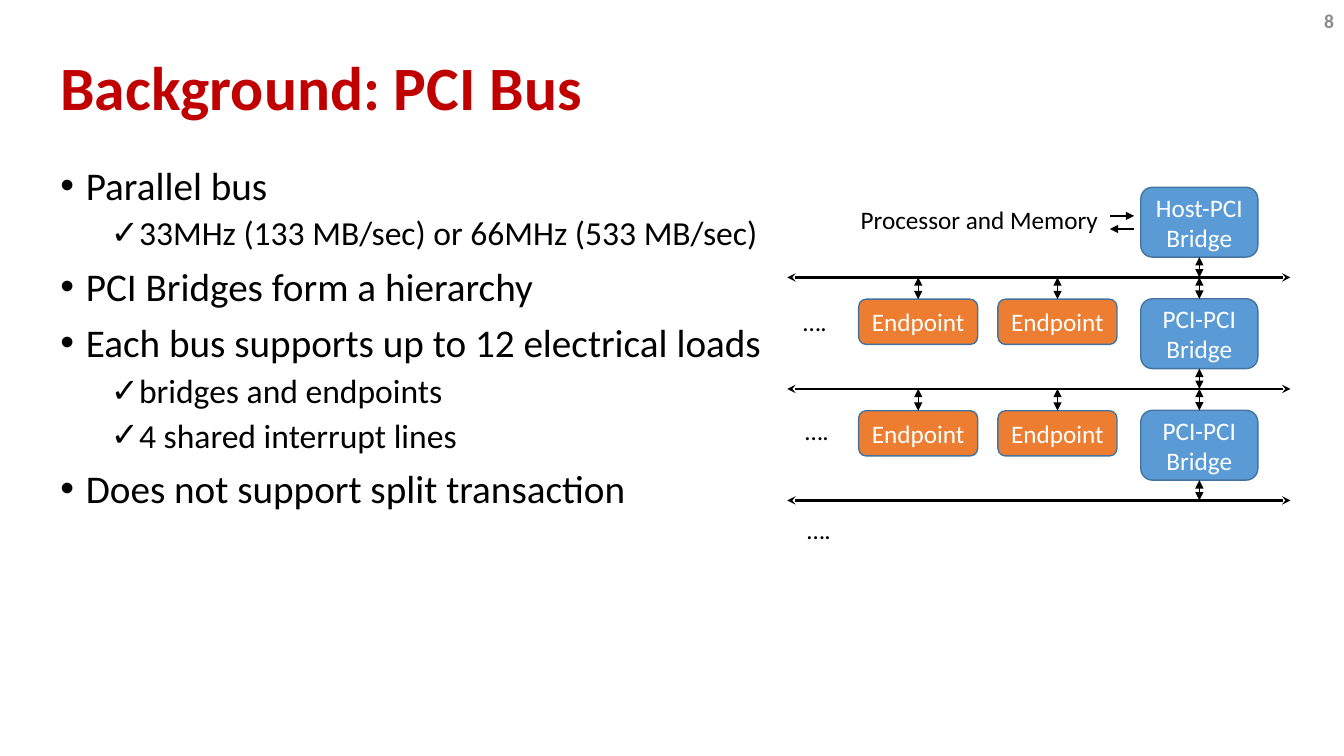
from lxml.etree import SubElement
from pptx import Presentation
from pptx.dml.color import RGBColor
from pptx.enum.shapes import MSO_CONNECTOR, MSO_SHAPE
from pptx.enum.text import MSO_ANCHOR, MSO_AUTO_SIZE, PP_ALIGN
from pptx.oxml.ns import qn
from pptx.util import Cm, Pt

BLACK, WHITE, RED, GREY = "000000", "FFFFFF", "C00000", "8C8C8C"
BLUE, ORANGE, OUTLINE = "5B9BD5", "ED7D31", "43739E"

LEVEL_PITCH = 2.81
BUS_TOP, BUS_LEFT, BUS_RIGHT = 6.99, 19.84, 32.52
BRIDGE_TOP, BRIDGE_LEFT, BRIDGE_WIDTH, BRIDGE_HEIGHT = 4.72, 28.75, 2.95, 1.76
ENDPOINT_TOP, ENDPOINT_WIDTH, ENDPOINT_HEIGHT = 7.54, 3, 1.14
ENDPOINT_LEFTS = (21.64, 25.15)
BRIDGES = ("Host-PCI\nBridge", "PCI-PCI\nBridge", "PCI-PCI\nBridge")
ELLIPSIS_PLACES = ((19.99, 7.6), (20.04, 10.34), (20.09, 12.83))

# Size, space before, left margin (cm) and bullet for each list level
LIST_LEVELS = ((28, 10, 0.64, "•"), (24, 6, 1.91, "✓"))
BULLETS = (
    (0, "Parallel bus"),
    (1, "33MHz (133 MB/sec) or 66MHz (533 MB/sec)"),
    (0, "PCI Bridges form a hierarchy"),
    (0, "Each bus supports up to 12 electrical loads"),
    (1, "bridges and endpoints"),
    (1, "4 shared interrupt lines"),
    (0, "Does not support split transaction"),
)


def colour(value):
    return RGBColor.from_string(value)


def set_format(target, values):
    for key, value in values.items():
        setattr(target, key, value)


def format_font(paragraph, size, hex_colour, bold=False):
    set_format(paragraph.font, {"name": "Calibri", "size": Pt(size), "bold": bold})
    paragraph.font.color.rgb = colour(hex_colour)


def place(shape, left, top, width, height):
    set_format(shape, {"left": Cm(left), "top": Cm(top),
                       "width": Cm(width), "height": Cm(height)})


def fill_title(title):
    place(title, 1.27, 1.02, 31.75, 2.54)
    title.text_frame.text = "Background: PCI Bus"
    set_format(title.text_frame, {"auto_size": MSO_AUTO_SIZE.NONE,
                                  "vertical_anchor": MSO_ANCHOR.MIDDLE})
    heading = title.text_frame.paragraphs[0]
    set_format(heading, {"alignment": PP_ALIGN.LEFT, "line_spacing": 0.9})
    format_font(heading, 44, RED, bold=True)


def fill_list(body):
    place(body, 1.27, 4.06, 20.55, 13.97)
    body.text_frame.text = "\n".join(text for _, text in BULLETS)
    set_format(body.text_frame, {"auto_size": MSO_AUTO_SIZE.NONE,
                                 "vertical_anchor": MSO_ANCHOR.TOP})
    for item, (level, _) in zip(body.text_frame.paragraphs, BULLETS):
        size, space, margin, bullet = LIST_LEVELS[level]
        set_format(item, {"level": level, "line_spacing": 0.9,
                          "space_before": Pt(space), "space_after": Pt(0)})
        format_font(item, size, BLACK)
        properties = item._p.get_or_add_pPr()
        properties.set("marL", str(Cm(margin)))
        properties.set("indent", str(Cm(-0.64)))
        SubElement(properties, qn("a:buFont")).set("typeface", "Arial")
        SubElement(properties, qn("a:buChar")).set("char", bullet)


def add_label(slide, text, left, top, width, size=18, hex_colour=BLACK, bold=False,
              wrap=True, align=PP_ALIGN.LEFT, anchor=MSO_ANCHOR.TOP):
    label = slide.shapes.add_textbox(Cm(left), Cm(top), Cm(width), Cm(1.02))
    set_format(label.text_frame, {"text": text, "word_wrap": wrap,
                                  "vertical_anchor": anchor})
    line = label.text_frame.paragraphs[0]
    line.alignment = align
    format_font(line, size, hex_colour, bold)


def add_node(slide, text, left, top, width, height, fill):
    node = slide.shapes.add_shape(MSO_SHAPE.ROUNDED_RECTANGLE,
                                  Cm(left), Cm(top), Cm(width), Cm(height))
    node.shadow.inherit = False
    node.fill.solid()
    node.fill.fore_color.rgb = colour(fill)
    node.line.color.rgb = colour(OUTLINE)
    node.line.width = Pt(1)
    set_format(node.text_frame, {"text": text, "word_wrap": True,
                                 "vertical_anchor": MSO_ANCHOR.MIDDLE})
    for line in node.text_frame.paragraphs:
        line.alignment = PP_ALIGN.CENTER
        format_font(line, 18, WHITE)
    return node


def add_arrow(slide, start, end, width=1, head="triangle", tail="triangle"):
    """Draw a line with an arrowhead at its start (head) and its end (tail)."""
    arrow = slide.shapes.add_connector(MSO_CONNECTOR.STRAIGHT,
                                       *(Cm(value) for value in start + end))
    arrow.line.color.rgb = colour(BLACK)
    arrow.line.width = Pt(width)
    outline = arrow.line._get_or_add_ln()
    for tag, kind in (("a:headEnd", head), ("a:tailEnd", tail)):
        SubElement(outline, qn(tag)).set("type", kind)
    SubElement(arrow._element.spPr, qn("a:effectLst"))
    return arrow


def link_to_bus(slide, node, site, node_y, bus_y):
    """Join the top (0) or bottom (2) of a node to a bus."""
    centre = (node.left + node.width // 2) / Cm(1)
    link = add_arrow(slide, (centre, node_y), (centre, bus_y))
    link.begin_connect(node, site)


def add_bus_level(slide, level, bridge_name):
    """Draw a bridge, the bus below it and the links to the buses around it."""
    shift = level * LEVEL_PITCH
    bus_y = BUS_TOP + shift
    bridge_y = BRIDGE_TOP + shift
    add_arrow(slide, (BUS_LEFT, bus_y), (BUS_RIGHT, bus_y), 2, "stealth", "stealth")
    bridge = add_node(slide, bridge_name, BRIDGE_LEFT, bridge_y,
                      BRIDGE_WIDTH, BRIDGE_HEIGHT, BLUE)
    link_to_bus(slide, bridge, 2, bridge_y + BRIDGE_HEIGHT, bus_y)
    if level > 0:
        link_to_bus(slide, bridge, 0, bridge_y, bus_y - LEVEL_PITCH)
    if level < len(BRIDGES) - 1:
        endpoint_y = ENDPOINT_TOP + shift
        for left in ENDPOINT_LEFTS:
            endpoint = add_node(slide, "Endpoint", left, endpoint_y,
                                ENDPOINT_WIDTH, ENDPOINT_HEIGHT, ORANGE)
            link_to_bus(slide, endpoint, 0, endpoint_y, bus_y)


def main():
    deck = Presentation()
    set_format(deck, {"slide_width": Cm(33.87), "slide_height": Cm(19.05)})
    slide = deck.slides.add_slide(deck.slide_layouts[1])
    fill_title(slide.shapes.title)
    fill_list(slide.placeholders[1])
    add_label(slide, "8", 26.25, 0, 7.62, 14, GREY, bold=True,
              align=PP_ALIGN.RIGHT, anchor=MSO_ANCHOR.MIDDLE)

    for level, bridge_name in enumerate(BRIDGES):
        add_bus_level(slide, level, bridge_name)
    for left, top in ELLIPSIS_PLACES:
        add_label(slide, "….", left, top, 1.12, wrap=False)

    add_label(slide, "Processor and Memory", 21.44, 5.03, 6.6)
    add_arrow(slide, (27.97, 5.44), (28.58, 5.44), head="none")
    add_arrow(slide, (28.58, 5.77), (27.97, 5.77), head="none")
    deck.save("out.pptx")


if __name__ == "__main__":
    main()
